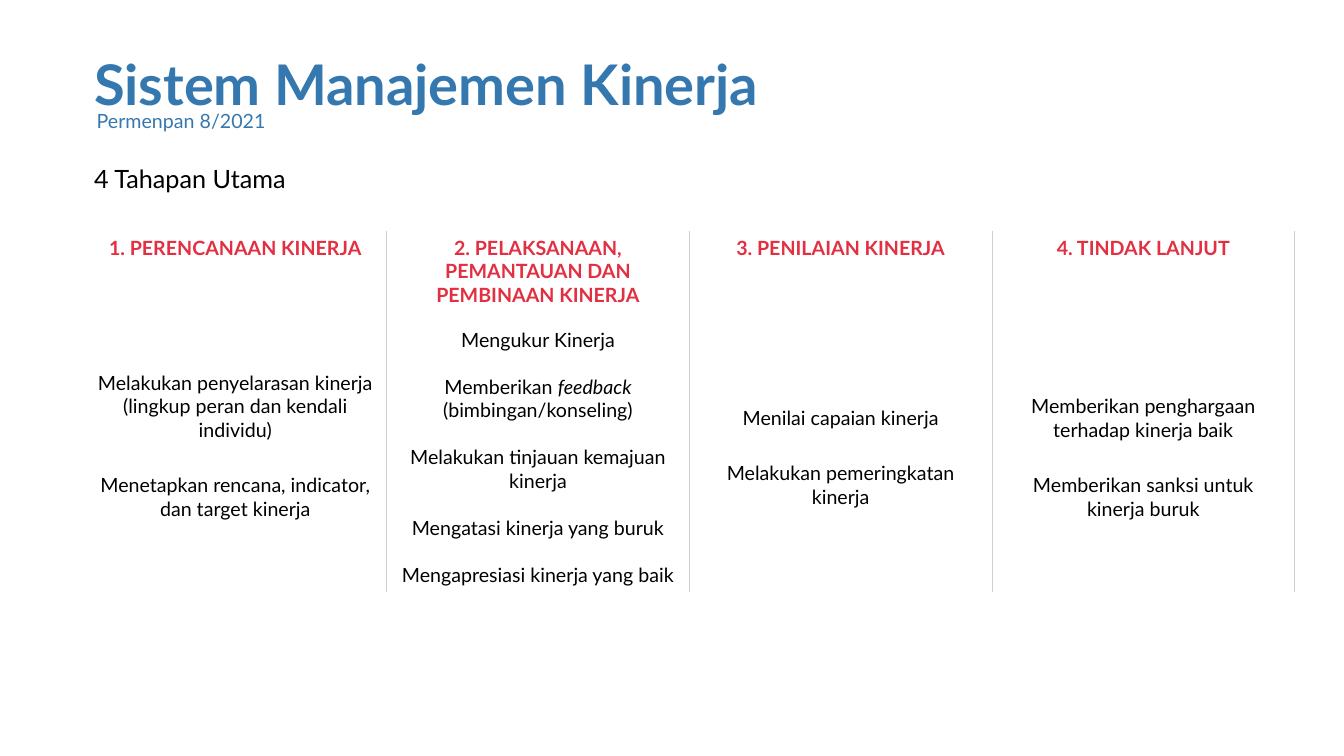
"""Build the slide on the four stages of the performance management system."""
from lxml.etree import SubElement
from pptx import Presentation
from pptx.dml.color import RGBColor
from pptx.enum.text import MSO_ANCHOR, MSO_AUTO_SIZE, PP_ALIGN
from pptx.oxml import parse_xml
from pptx.oxml.ns import nsdecls, qn
from pptx.util import Pt

BLUE = RGBColor(0x35, 0x78, 0xAF)
RED = RGBColor(0xE2, 0x30, 0x42)
BLACK = RGBColor(0, 0, 0)
GREY = RGBColor(0xD0, 0xCE, 0xCE)
FONT = "Lato"

TITLE = {"size": Pt(40), "bold": True, "color": BLUE}
SUBTITLE = {"size": Pt(14), "bold": False, "color": BLUE}
LEAD = {"size": Pt(18), "bold": False, "color": BLACK}
HEADING = {"size": Pt(14), "bold": True, "color": RED}
STEP = {"size": Pt(14), "bold": False, "color": BLACK}

ROW_HEIGHTS = (65.5, 192.5)
COLUMN_WIDTH = 216.2
STAGES = [
    ("1. PERENCANAAN KINERJA", 22.5, 20.4, [
        "Melakukan penyelarasan kinerja (lingkup peran dan kendali individu)",
        "Menetapkan rencana, indicator, dan target kinerja"]),
    ("2. PELAKSANAAN, PEMANTAUAN DAN PEMBINAAN KINERJA", 16.8, 3.6, [
        "Mengukur Kinerja",
        "Memberikan *feedback* (bimbingan/konseling)",
        "Melakukan tinjauan kemajuan kinerja",
        "Mengatasi kinerja yang buruk",
        "Mengapresiasi kinerja yang baik"]),
    ("3. PENILAIAN KINERJA", 22.5, 3.6, [
        "Menilai capaian kinerja",
        "Melakukan pemeringkatan kinerja"]),
    ("4. TINDAK LANJUT", 22.5, 3.6, [
        "Memberikan penghargaan terhadap kinerja baik",
        "Memberikan sanksi untuk kinerja buruk"]),
]


def format_run(r, style):
    """Apply a dict of font values to a run."""
    r.font.name = FONT
    for name, value in style.items():
        if name == "color":
            r.font.color.rgb = value
        else:
            setattr(r.font, name, value)


def write(tf, lines, style, align=PP_ALIGN.LEFT, gap=0, spacing=1.0):
    """Write paragraphs, with text between asterisks in italics."""
    for i, line in enumerate(lines):
        p = tf.paragraphs[0] if i == 0 else tf.add_paragraph()
        p.alignment, p.line_spacing = align, spacing
        p.space_before = Pt(gap if i else 0)
        p.space_after = Pt(0)
        for j, part in enumerate(line.split("*")):
            r = p.add_run()
            r.text = part
            format_run(r, {**style, "italic": j % 2 == 1})


def place_text(sp, box, text, style, anchor=MSO_ANCHOR.TOP, spacing=1.0):
    """Position a text shape and write one line in it."""
    for name, value in zip(("left", "top", "width", "height"), box):
        setattr(sp, name, Pt(value))
    tf = sp.text_frame
    frame = {"word_wrap": True, "auto_size": MSO_AUTO_SIZE.NONE,
             "vertical_anchor": anchor}
    for name, value in frame.items():
        setattr(tf, name, value)
    write(tf, [text], style, spacing=spacing)


def remove_bullet(p):
    """Turn off the bullet and its hanging indent."""
    pPr = p._p.get_or_add_pPr()
    pPr.set("marL", "0")
    pPr.set("indent", "0")
    SubElement(pPr, qn("a:buNone"))


def add_right_border(cell):
    """Draw a thin grey line on the right of a cell."""
    cell._tc.get_or_add_tcPr().insert(0, parse_xml(
        f'<a:lnR {nsdecls("a")} w="{Pt(0.5)}"><a:solidFill>'
        f'<a:srgbClr val="{GREY}"/></a:solidFill></a:lnR>'))


def fill_cell(cell, lines, style, anchor, gap=0, bottom=3.6):
    """Write centred text in a clear cell with a right border."""
    cell.fill.background()
    cell.vertical_anchor = anchor
    cell.margin_bottom = Pt(bottom)
    write(cell.text_frame, lines, style, PP_ALIGN.CENTER, gap)
    add_right_border(cell)


def add_stage_table(slide):
    """Add the table with one column for each stage."""
    frame = slide.shapes.add_table(
        len(ROW_HEIGHTS), len(STAGES), Pt(60), Pt(165),
        Pt(COLUMN_WIDTH * len(STAGES)), Pt(sum(ROW_HEIGHTS)))
    table = frame.table
    table.first_row = table.horz_banding = False
    style_id = table._tbl.tblPr.find(qn("a:tableStyleId"))
    style_id.text = "{2D5ABB26-0587-4C30-8999-92F81FD0307C}"
    for row, height in zip(table.rows, ROW_HEIGHTS):
        row.height = Pt(height)
    for col, (heading, gap, bottom, steps) in enumerate(STAGES):
        table.columns[col].width = Pt(COLUMN_WIDTH)
        fill_cell(table.cell(0, col), [heading], HEADING, MSO_ANCHOR.TOP)
        fill_cell(table.cell(1, col), steps, STEP, MSO_ANCHOR.MIDDLE,
                  gap, bottom)


def main():
    """Build and save the slide."""
    prs = Presentation()
    prs.slide_width, prs.slide_height = Pt(960), Pt(540)
    slide = prs.slides.add_slide(prs.slide_layouts[1])
    title, body = slide.placeholders
    place_text(title, (60, 37, 834, 51), "Sistem Manajemen Kinerja", TITLE,
               MSO_ANCHOR.MIDDLE, 0.9)
    place_text(body, (60, 113, 840, 27), "4 Tahapan Utama", LEAD)
    remove_bullet(body.text_frame.paragraphs[0])
    add_stage_table(slide)
    box = (62, 74, 840, 27)
    subtitle = slide.shapes.add_textbox(*map(Pt, box))
    place_text(subtitle, box, "Permenpan 8/2021", SUBTITLE)
    prs.save("out.pptx")


if __name__ == "__main__":
    main()
